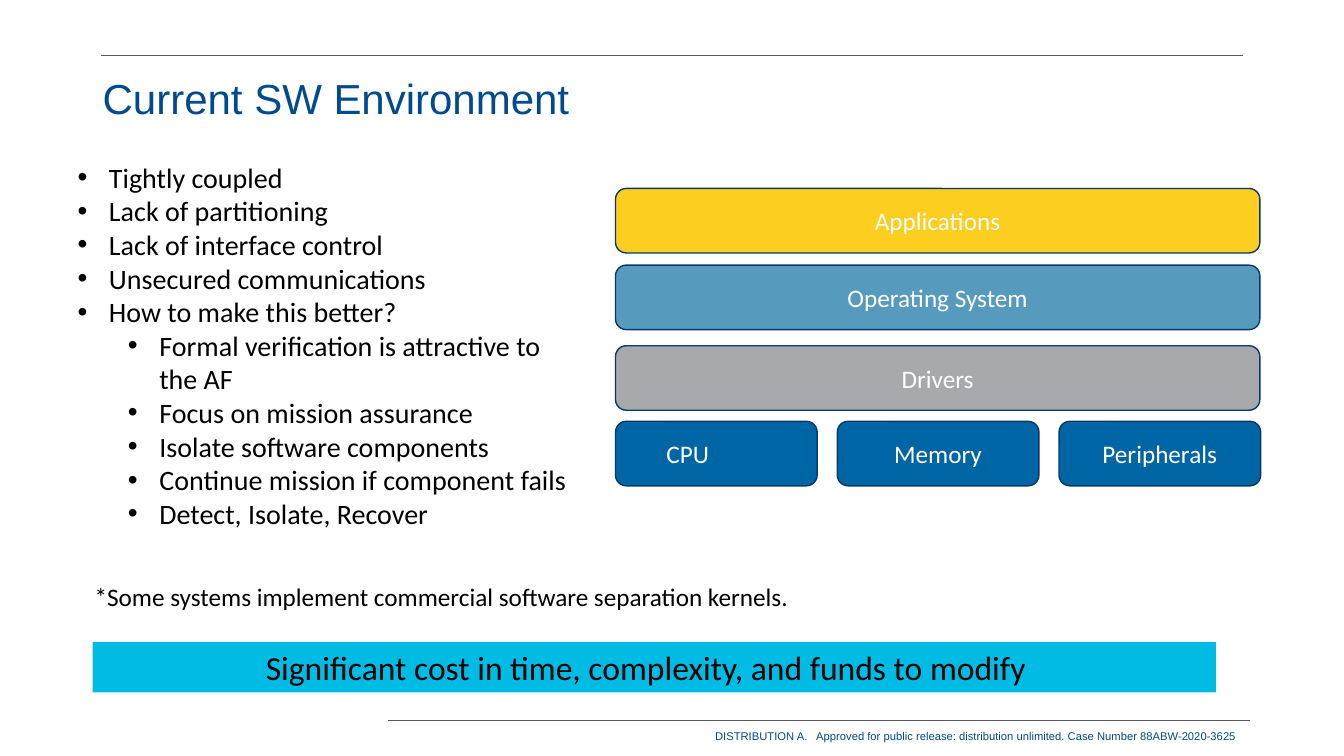
"""Build the slide on the current software environment and its layered stack."""
import pptx
import pptx.dml.color
import pptx.enum.shapes
import pptx.enum.text
import pptx.oxml
import pptx.oxml.ns
import pptx.util
from dataclasses import dataclass


@dataclass(frozen=True)
class Theme:
    heading_font: str = "Arial"
    body_font: str = "Calibri"
    navy: str = "004B8D"
    rule: str = "595A59"
    outline: str = "0A3968"
    black: str = "000000"
    white: str = "FFFFFF"
    yellow: str = "FBCE20"
    steel: str = "569BBE"
    gray: str = "A7A9AC"
    blue: str = "0065A4"
    cyan: str = "00BCE4"
    title: int = 30
    banner: int = 24
    bullets: int = 20
    label: int = 18
    footer: int = 8


theme = Theme()
rgb = pptx.dml.color.RGBColor.from_string
Align = pptx.enum.text.PP_ALIGN
Anchor = pptx.enum.text.MSO_ANCHOR
Shape = pptx.enum.shapes.MSO_SHAPE

prs = pptx.Presentation()
prs.slide_width = pptx.util.Inches(13.33)
prs.slide_height = pptx.util.Inches(7.5)
slide = prs.slides.add_slide(prs.slide_layouts[6])
COL = prs.slide_width / 100
ROW = prs.slide_height / 100


def grid(left, top, width, height):
    return [round(n * unit) for n, unit in zip((left, top, width, height), (COL, ROW, COL, ROW))]


def write(sp, text, size=theme.label, color=theme.black, font=theme.body_font,
          align=Align.LEFT, anchor=Anchor.TOP, spacing=None, right=0.75, levels=None):
    tf = sp.text_frame
    tf.word_wrap = True
    tf.vertical_anchor = anchor
    tf.margin_right = round(right * COL)
    for i, line in enumerate(text.split("\n")):
        p = tf.paragraphs[0] if i == 0 else tf.add_paragraph()
        p.alignment = align
        if spacing:
            p.line_spacing = spacing
        if levels:
            p.level = levels[i]
            pPr = p._p.get_or_add_pPr()
            hang = 2.34 * COL
            pPr.set("marL", str(round(hang + levels[i] * 3.75 * COL)))
            pPr.set("indent", str(-round(hang)))
            ns = pptx.oxml.ns.nsdecls("a")
            pPr.append(pptx.oxml.parse_xml(f'<a:buFont {ns} typeface="Arial"/>'))
            pPr.append(pptx.oxml.parse_xml(f'<a:buChar {ns} char="•"/>'))
        r = p.add_run()
        r.text = line
        r.font.size = pptx.util.Pt(size)
        r.font.name = font
        r.font.color.rgb = rgb(color)


for x1, x2, y in ((7.5, 92.5, 7.33), (28.88, 93.02, 95.33)):
    line = slide.shapes.add_connector(
        pptx.enum.shapes.MSO_CONNECTOR.STRAIGHT, *grid(x1, y, x2, y))
    line.line.color.rgb = rgb(theme.rule)
    line.line.width = pptx.util.Pt(0.5)
    line._element.spPr.append(
        pptx.oxml.parse_xml(f'<a:effectLst {pptx.oxml.ns.nsdecls("a")}/>'))

title = slide.shapes.add_textbox(*grid(6.9, 8, 86.27, 10.67))
write(title, "Current SW Environment", size=theme.title, color=theme.navy,
      font=theme.heading_font, anchor=Anchor.MIDDLE, spacing=0.9)

footer = slide.shapes.add_textbox(*grid(4.2, 96, 88.82, 2.13))
write(footer, "DISTRIBUTION A.   Approved for public release: distribution unlimited. "
      "Case Number 88ABW-2020-3625", size=theme.footer, color=theme.navy,
      font=theme.heading_font, align=Align.RIGHT, spacing=0.9, right=1)

STACK_LEFT, STACK_WIDTH, BLOCK_HEIGHT = 45.8, 47.94, 8.53
HARDWARE_WIDTH, HARDWARE_PITCH, HARDWARE_TOP = 15, 16.5, 55.73
blocks = [(name, theme.blue, STACK_LEFT + i * HARDWARE_PITCH, HARDWARE_TOP, HARDWARE_WIDTH, right)
          for i, (name, right) in enumerate((("CPU", 5), ("Memory", 0.75), ("Peripherals", 0.75)))]
blocks += [(name, fill, STACK_LEFT, top, STACK_WIDTH, 0.75)
           for name, fill, top in (("Drivers", theme.gray, 45.73),
                                   ("Operating System", theme.steel, 35.07),
                                   ("Applications", theme.yellow, 24.93))]
for name, fill, left, top, width, right in blocks:
    sp = slide.shapes.add_shape(Shape.ROUNDED_RECTANGLE, *grid(left, top, width, BLOCK_HEIGHT))
    sp.shadow.inherit = False
    sp.fill.solid()
    sp.fill.fore_color.rgb = rgb(fill)
    sp.line.color.rgb = rgb(theme.outline)
    sp.line.width = pptx.util.Pt(1)
    write(sp, name, color=theme.white, align=Align.CENTER, anchor=Anchor.MIDDLE, right=right)

issues = ["Tightly coupled", "Lack of partitioning", "Lack of interface control",
          "Unsecured communications", "How to make this better?"]
remedies = ["Formal verification is attractive to the AF", "Focus on mission assurance",
            "Isolate software components", "Continue mission if component fails",
            "Detect, Isolate, Recover"]
bullets = slide.shapes.add_textbox(*grid(5.03, 20.53, 38.63, 50.67))
write(bullets, "\n".join(issues + remedies), size=theme.bullets,
      levels=[0] * len(issues) + [1] * len(remedies))

banner = slide.shapes.add_shape(Shape.RECTANGLE, *grid(6.9, 84.93, 83.57, 6.67))
banner.shadow.inherit = False
banner.fill.solid()
banner.fill.fore_color.rgb = rgb(theme.cyan)
banner.line.fill.background()
write(banner, "Significant cost in time, complexity, and funds to modify",
      size=theme.banner, align=Align.CENTER, right=2)

note = slide.shapes.add_textbox(*grid(6.3, 76.27, 74.64, 9.47))
write(note, "*Some systems implement commercial software separation kernels.")

prs.save("out.pptx")
